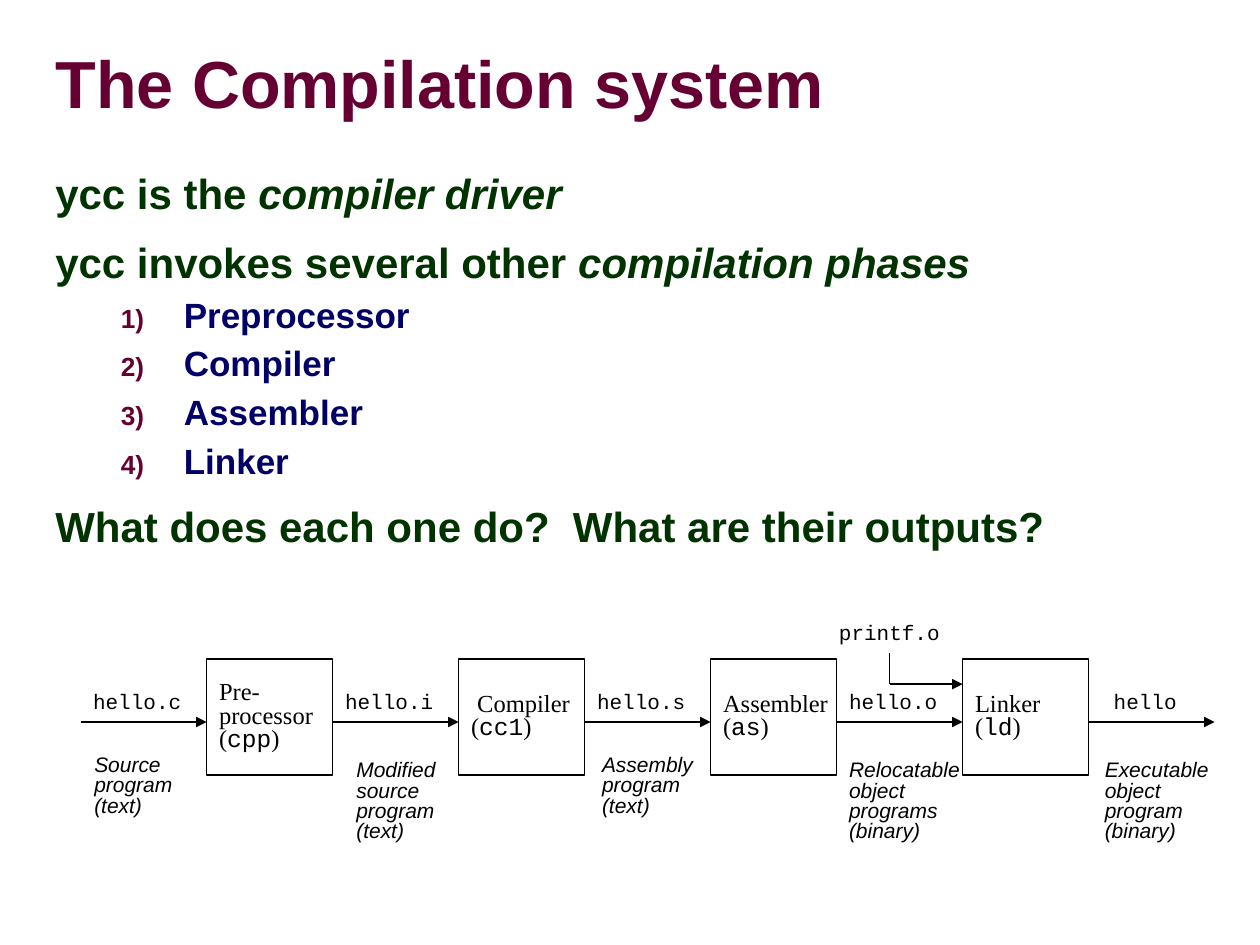
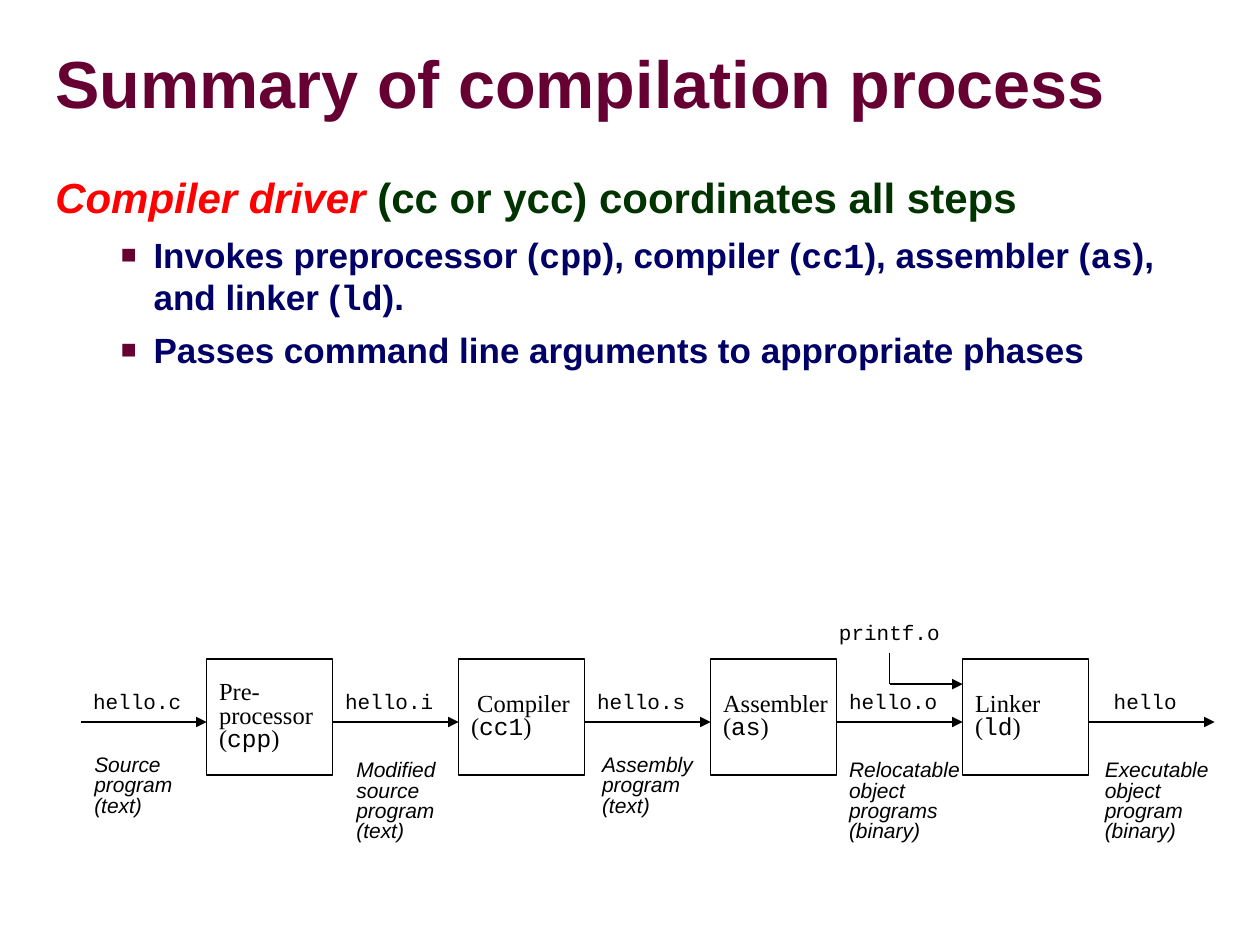
"""Build two slides on the phases of the compilation system."""
import pptx
import pptx.dml.color
import pptx.enum.shapes
import pptx.enum.text
import pptx.oxml
import pptx.oxml.ns
import pptx.util
from pptx.util import Inches

COLORS = {"title": "660033", "point": "003300", "step": "000066",
          "key": "FF0000", "ink": "000000"}

# Text styles: size, font, colour, bold, italic
STYLES = {
    "title": (38, "Arial", "title", True, False),
    "point": (24, "Arial", "point", True, False),
    "term": (24, "Arial", "point", True, True),
    "key": (24, "Arial", "key", True, True),
    "step": (20, "Arial", "step", True, False),
    "step code": (20, "Courier New", "step", True, False),
    "phase": (14, "Times New Roman", "ink", False, False),
    "phase code": (14, "Courier New", "ink", False, False),
    "file": (12, "Courier New", "ink", False, False),
    "note": (12, "Arial", "ink", False, True),
}

NUMBER = '<a:buAutoNum %s type="arabicParenR"/>'
SQUARE = '<a:buChar %s char="■"/>'

# Paragraph kinds: level, left margin, first-line indent, line spacing, space before, bullet
KINDS = {
    "point": (0, 0.42, -0.4, 0.85, 15, None),
    "open point": (0, 0.42, -0.4, 0.95, 15, None),
    "numbered": (1, 1.04, -0.5, 0.9, 6.2, NUMBER),
    "bulleted": (1, 0.8, -0.26, 1.0, 6.2, SQUARE),
}

SLIDES = [
    ("The Compilation system", 3.63, [
        ("point", [("ycc is the ", "point"), ("compiler driver", "term")]),
        ("point", [("ycc invokes several other ", "point"), ("compilation phases", "term")]),
        ("numbered", [("Preprocessor", "step")]),
        ("numbered", [("Compiler", "step")]),
        ("numbered", [("Assembler", "step")]),
        ("numbered", [("Linker", "step")]),
        ("point", [("What does each one do?  What are their outputs?", "point")]),
    ]),
    ("Summary of compilation process", 5.71, [
        ("open point", [("Compiler driver", "key"),
                        (" (cc or ycc) coordinates all steps", "point")]),
        ("bulleted", [("Invokes preprocessor (", "step"), ("cpp", "step code"),
                      ("), compiler (", "step"), ("cc1", "step code"),
                      ("), assembler (", "step"), ("as", "step code"),
                      ("),  and linker (", "step"), ("ld", "step code"), (").", "step")]),
        ("bulleted", [("Passes command line arguments to appropriate phases", "step")]),
    ]),
]

PHASES = [(["Pre-", "processor"], "cpp"), ([" Compiler"], "cc1"),
          (["Assembler"], "as"), (["Linker"], "ld")]

# Files between phases: name, label offset, label width, note lines, note left, note width
FILES = [
    ("hello.c", 0, 0.91, ["Source", "program", "(text)"], 0.65, 0.86),
    ("hello.i", 0, 0.91, ["Modified", "source", "program", "(text)"], 2.73, 0.87),
    ("hello.s", 0, 0.91, ["Assembly", "program", "(text)"], 4.68, 0.97),
    ("hello.o", 0, 0.91, ["Relocatable", "object", "programs", "(binary)"], 6.64, 1.13),
    ("hello", 0.1, 0.71, ["Executable", "object", "program", "(binary)"], 8.67, 1.07),
]

FLOW_LEFT, STEP, PHASE_WIDTH = 0.64, 2, 1
PHASE_TOP, PHASE_HEIGHT = 5.23, 0.92
FLOW_Y, FILE_TOP, FILE_HEIGHT = 5.73, 5.45, 0.27
NOTE_PLACES = {3: (5.95, 0.59), 4: (5.99, 0.75)}
LIBRARY = ("printf.o", 6.56, 4.9, 1.01)
LIBRARY_X, LIBRARY_TOP, LIBRARY_Y = 7.06, 5.18, 5.43


def color(name):
    return pptx.dml.color.RGBColor.from_string(COLORS[name])


def add_runs(paragraph, runs):
    for text, style in runs:
        size, face, ink, bold, italic = STYLES[style]
        run = paragraph.add_run()
        run.text = text
        run.font.size = pptx.util.Pt(size)
        run.font.name = face
        run.font.color.rgb = color(ink)
        run.font.bold, run.font.italic = bold, italic


def paragraphs_of(frame, count):
    return [frame.paragraphs[0]] + [frame.add_paragraph() for _ in range(count - 1)]


def add_lines(frame, lines):
    frame.word_wrap = False
    frame.vertical_anchor = pptx.enum.text.MSO_ANCHOR.MIDDLE
    for paragraph, runs in zip(paragraphs_of(frame, len(lines)), lines):
        paragraph.alignment = pptx.enum.text.PP_ALIGN.LEFT
        paragraph.line_spacing = 0.8
        add_runs(paragraph, runs)


def add_label(slide, lines, style, left, top, width, height):
    label = slide.shapes.add_textbox(*map(Inches, (left, top, width, height)))
    add_lines(label.text_frame, [[(line, style)] for line in lines])
    label.text_frame.auto_size = pptx.enum.text.MSO_AUTO_SIZE.SHAPE_TO_FIT_TEXT


def add_line(slide, start, end, arrow=True):
    line = slide.shapes.add_connector(
        pptx.enum.shapes.MSO_CONNECTOR.STRAIGHT, *map(Inches, start + end))
    line.line.color.rgb = color("ink")
    line.line.width = pptx.util.Pt(1)
    if arrow:
        line.line._get_or_add_ln().append(pptx.oxml.parse_xml(
            f'<a:tailEnd {pptx.oxml.ns.nsdecls("a")} type="triangle"/>'))
    line._element.spPr.append(pptx.oxml.parse_xml(
        f'<a:effectLst {pptx.oxml.ns.nsdecls("a")}/>'))


def add_phase(slide, left, names, command):
    phase = slide.shapes.add_shape(
        pptx.enum.shapes.MSO_SHAPE.RECTANGLE,
        *map(Inches, (left, PHASE_TOP, PHASE_WIDTH, PHASE_HEIGHT)))
    phase.shadow.inherit = False
    phase.fill.background()
    phase.line.color.rgb = color("ink")
    phase.line.width = pptx.util.Pt(1)
    call = [("(", "phase"), (command, "phase code"), (")", "phase")]
    add_lines(phase.text_frame, [[(name, "phase")] for name in names] + [call])


def add_pipeline(slide):
    for index, (names, command) in enumerate(PHASES):
        add_phase(slide, FLOW_LEFT + PHASE_WIDTH + index * STEP, names, command)
    for index, (name, offset, width, note, note_left, note_width) in enumerate(FILES):
        left = FLOW_LEFT + index * STEP
        add_line(slide, (left, FLOW_Y), (left + STEP - PHASE_WIDTH, FLOW_Y))
        add_label(slide, [name], "file", left + offset, FILE_TOP, width, FILE_HEIGHT)
        note_top, note_height = NOTE_PLACES[len(note)]
        add_label(slide, note, "note", note_left, note_top, note_width, note_height)
    name, left, top, width = LIBRARY
    add_label(slide, [name], "file", left, top, width, FILE_HEIGHT)
    linker_left = FLOW_LEFT + PHASE_WIDTH + (len(PHASES) - 1) * STEP
    add_line(slide, (LIBRARY_X, LIBRARY_TOP), (LIBRARY_X, LIBRARY_Y), arrow=False)
    add_line(slide, (LIBRARY_X, LIBRARY_Y), (linker_left, LIBRARY_Y))


def set_title(slide, text):
    title = slide.shapes.title
    title.left, title.top, title.width, title.height = map(Inches, (0.44, 0.27, 9.53, 0.85))
    frame = title.text_frame
    frame.margin_left = frame.margin_right = frame.margin_top = frame.margin_bottom = 0
    frame.auto_size = pptx.enum.text.MSO_AUTO_SIZE.NONE
    frame.vertical_anchor = pptx.enum.text.MSO_ANCHOR.MIDDLE
    heading = frame.paragraphs[0]
    heading.alignment = pptx.enum.text.PP_ALIGN.LEFT
    heading.line_spacing = 0.87
    add_runs(heading, [(text, "title")])


def add_bullet(properties, bullet):
    namespace = pptx.oxml.ns.nsdecls("a")
    for part in (f'<a:buClr %s><a:srgbClr val="{COLORS["title"]}"/></a:buClr>',
                 '<a:buSzPct %s val="75000"/>', '<a:buFont %s typeface="Arial"/>', bullet):
        properties.append(pptx.oxml.parse_xml(part % namespace))


def add_body(slide, height, points):
    body = slide.shapes.add_textbox(*map(Inches, (0.32, 1.34, 9.09, height)))
    frame = body.text_frame
    frame.word_wrap = True
    for paragraph, (kind, runs) in zip(paragraphs_of(frame, len(points)), points):
        level, margin, indent, spacing, before, bullet = KINDS[kind]
        paragraph.level = level
        paragraph.line_spacing = spacing
        paragraph.space_before = pptx.util.Pt(before)
        properties = paragraph._p.get_or_add_pPr()
        properties.set("marL", str(Inches(margin)))
        properties.set("indent", str(Inches(indent)))
        if bullet:
            add_bullet(properties, bullet)
        add_runs(paragraph, runs)


def main():
    deck = pptx.Presentation()
    deck.slide_width, deck.slide_height = Inches(10), Inches(7.5)
    for title, body_height, points in SLIDES:
        slide = deck.slides.add_slide(deck.slide_layouts[5])
        set_title(slide, title)
        add_body(slide, body_height, points)
        add_pipeline(slide)
    deck.save("out.pptx")


if __name__ == "__main__":
    main()
